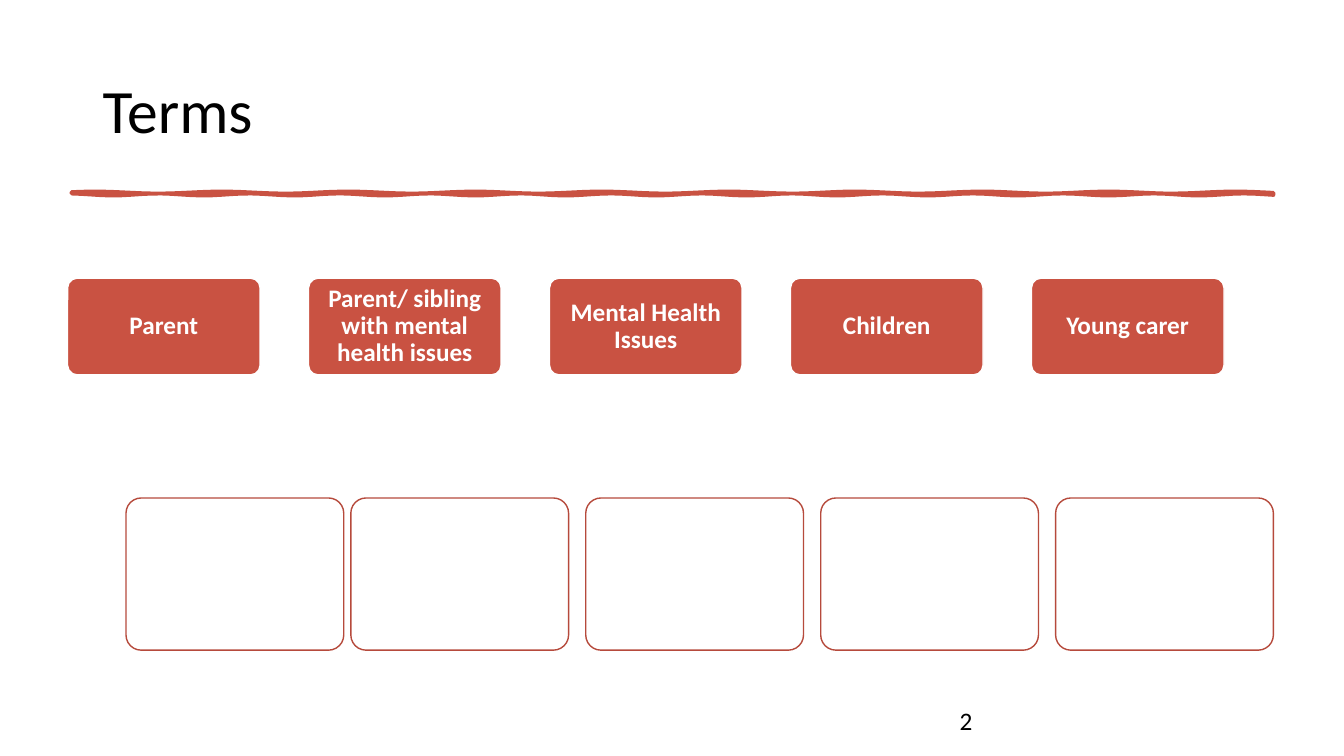
from math import sin

from pptx import Presentation
from pptx.dml.color import RGBColor
from pptx.enum.shapes import MSO_SHAPE
from pptx.enum.text import MSO_ANCHOR, PP_ALIGN
from pptx.util import Inches, Pt

COLORS = {
    "accent": "C95242",
    "outline": "B64A3C",
    "white": "FFFFFF",
    "text": "000000",
}
FONT = "Calibri"
TERMS = [
    "Parent",
    "Parent/ sibling with mental health issues",
    "Mental Health Issues",
    "Children",
    "Young carer",
]


def color(name):
    return RGBColor.from_string(COLORS[name])


def paint(shape, fill, line, width):
    shape.shadow.inherit = False
    shape.fill.solid()
    shape.fill.fore_color.rgb = color(fill)
    shape.line.color.rgb = color(line)
    shape.line.width = Pt(width)


def write(shape, text, size, font_color, bold=False):
    shape.text_frame.word_wrap = True
    paragraph = shape.text_frame.paragraphs[0]
    paragraph.text = text
    paragraph.font.name = FONT
    paragraph.font.size = Pt(size)
    paragraph.font.bold = bold
    paragraph.font.color.rgb = color(font_color)
    return paragraph


def add_text(slide, left, top, width, height, text, size):
    box = slide.shapes.add_textbox(
        Inches(left), Inches(top), Inches(width), Inches(height))
    box.text_frame.vertical_anchor = MSO_ANCHOR.MIDDLE
    return write(box, text, size, "text")


def add_rounded_box(slide, left, top, width, height, fill, line):
    box = slide.shapes.add_shape(
        MSO_SHAPE.ROUNDED_RECTANGLE,
        Inches(left), Inches(top), Inches(width), Inches(height))
    box.adjustments[0] = 0.1
    paint(box, fill, line, 1)
    return box


def add_hand_drawn_rule(slide, left, top, width, height, steps=120):
    """A thin closed band whose two long edges ripple independently."""
    xs = [left + width * step / steps for step in range(steps + 1)]
    upper = [(x, top + 0.01 * sin(5 * x)) for x in xs]
    lower = [(x, top + height + 0.01 * sin(7 * x)) for x in reversed(xs)]
    points = [(Inches(x), Inches(y)) for x, y in upper + lower]
    builder = slide.shapes.build_freeform(*points[0])
    builder.add_line_segments(points[1:], close=True)
    paint(builder.convert_to_shape(), "accent", "accent", 2.75)


def add_term_cards(slide, left, top, width, height, pitch):
    for index, term in enumerate(TERMS):
        card = add_rounded_box(slide, left + index * pitch, top, width, height,
                               "accent", "white")
        frame = card.text_frame
        frame.margin_left = frame.margin_right = Inches(0.04)
        frame.margin_top = frame.margin_bottom = Inches(0.03)
        frame.vertical_anchor = MSO_ANCHOR.MIDDLE
        paragraph = write(card, term, 18, "white", bold=True)
        paragraph.alignment = PP_ALIGN.CENTER
        paragraph.line_spacing = 0.9


def add_empty_cards(slide, left, top, width, height, first_pitch, pitch):
    # The first card stands closer to its neighbour than the others
    offsets = [0] + [first_pitch + index * pitch
                     for index in range(len(TERMS) - 1)]
    for offset in offsets:
        add_rounded_box(slide, left + offset, top, width, height,
                        "white", "outline")


def main():
    presentation = Presentation()
    presentation.slide_width = Inches(13.33)
    presentation.slide_height = Inches(7.5)
    slide = presentation.slides.add_slide(presentation.slide_layouts[6])

    # Heading and rule
    add_hand_drawn_rule(slide, 0.71, 1.91, 11.92, 0.02)
    title = add_text(slide, 0.92, 0.4, 11.5, 1.45, "Terms", 44)
    title.line_spacing = 0.9

    # Terms, with an empty card for each
    add_term_cards(slide, 0.67, 2.76, 1.91, 0.96, pitch=2.39)
    add_empty_cards(slide, 1.25, 4.94, 2.16, 1.51, first_pitch=2.23, pitch=2.33)

    # Slide number
    add_text(slide, 9.42, 6.95, 3, 0.4, "2", 18)

    presentation.save("out.pptx")


if __name__ == "__main__":
    main()
